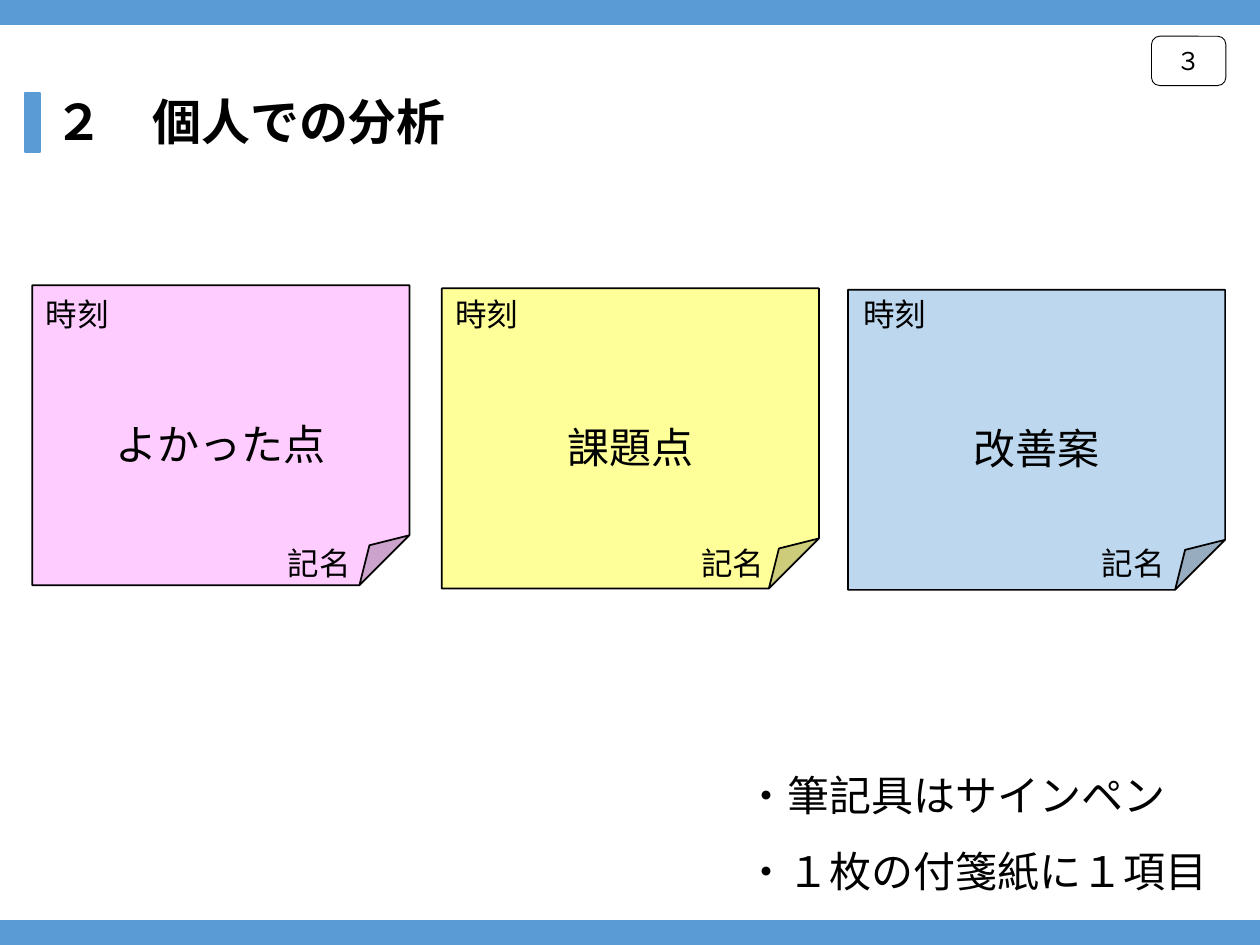
from dataclasses import dataclass

from pptx import Presentation
from pptx.dml.color import RGBColor
from pptx.enum.shapes import MSO_SHAPE as SHAPE
from pptx.enum.text import MSO_ANCHOR, MSO_AUTO_SIZE, PP_ALIGN
from pptx.oxml.ns import qn
from pptx.util import Pt


@dataclass(frozen=True)
class Theme:
    face: str = "Noto Sans CJK JP"
    ink: str = "000000"
    paper: str = "FFFFFF"
    blue: str = "5B9BD5"
    pink: str = "FFCCFF"
    yellow: str = "FFFF99"
    sky: str = "BDD7EE"
    title: int = 28
    body: int = 24
    label: int = 18
    number: int = 14


def apply(target, values):
    for name, value in values.items():
        setattr(target, name, value)


class Deck:
    def __init__(self, theme):
        self.theme = theme
        self.show = Presentation()
        apply(self.show, {"slide_width": Pt(720), "slide_height": Pt(540)})
        self.slide = self.show.slides.add_slide(self.show.slide_layouts[6])

    def fill_text(self, frame, lines, size, align, bold=False, space=1.0):
        for i, line in enumerate(lines):
            para = frame.paragraphs[0] if i == 0 else frame.add_paragraph()
            apply(para, {"alignment": align, "line_spacing": space})
            run = para.add_run()
            run.text = line
            apply(run.font, {"name": self.theme.face, "size": Pt(size),
                             "bold": bold})
            run.font.color.rgb = RGBColor.from_string(self.theme.ink)
            east = run.font._element.makeelement(
                qn("a:ea"), {"typeface": self.theme.face})
            run.font._element.find(qn("a:latin")).addnext(east)

    def shape(self, kind, box, fill, line=None, width=1):
        item = self.slide.shapes.add_shape(kind, *map(Pt, box))
        item.shadow.inherit = False
        item.fill.solid()
        item.fill.fore_color.rgb = RGBColor.from_string(fill)
        if line:
            item.line.color.rgb = RGBColor.from_string(line)
            item.line.width = Pt(width)
        else:
            item.line.fill.background()
        return item

    def text(self, box, lines, size, align=PP_ALIGN.LEFT, wrap=False, **style):
        frame = self.slide.shapes.add_textbox(*map(Pt, box)).text_frame
        apply(frame, {"word_wrap": wrap,
                      "auto_size": MSO_AUTO_SIZE.SHAPE_TO_FIT_TEXT})
        self.fill_text(frame, lines, size, align, **style)

    def note(self, left, top, fill, label, time, sign):
        """Draw a sticky note; time and sign are its small labels' corners."""
        card = self.shape(SHAPE.FOLDED_CORNER, (left, top, 215.5, 171.5),
                          fill, self.theme.ink)
        # The deep top inset sets the label below the middle.
        apply(card.text_frame, {"margin_top": Pt(42), "margin_bottom": Pt(4),
                                "vertical_anchor": MSO_ANCHOR.MIDDLE})
        self.fill_text(card.text_frame, [label], self.theme.body,
                       PP_ALIGN.CENTER)
        for word, spot in (("時刻", time), ("記名", sign)):
            self.text((*spot, 51, 29), [word], self.theme.label,
                      PP_ALIGN.CENTER)

    def badge(self, box, number):
        item = self.shape(SHAPE.ROUNDED_RECTANGLE, box, self.theme.paper,
                          self.theme.ink, 0.5)
        item.text_frame.vertical_anchor = MSO_ANCHOR.MIDDLE
        self.fill_text(item.text_frame, [number], self.theme.number,
                       PP_ALIGN.CENTER)


def main():
    theme = Theme()
    deck = Deck(theme)

    for top in (0, 525.8):
        deck.shape(SHAPE.RECTANGLE, (0, top, 720, 14.2), theme.blue)
    deck.shape(SHAPE.RECTANGLE, (14.2, 53, 8.6, 34), theme.blue, theme.blue)
    deck.text((24, 49, 574, 41), ["２　個人での分析"], theme.title,
              wrap=True, bold=True)
    deck.badge((658, 20.7, 42.5, 28.2), "３")

    notes = (
        (18.5, 163, theme.pink, "よかった点", (18.5, 165), (157, 307.5)),
        (252.5, 164.8, theme.yellow, "課題点", (252.7, 165), (393.3, 307.5)),
        (484.6, 165.6, theme.sky, "改善案", (485.8, 165), (622, 307.5)),
    )
    for note in notes:
        deck.note(*note)

    deck.text((419, 422, 281, 94),
              ["・筆記具はサインペン", "・１枚の付箋紙に１項目"],
              theme.body, space=1.5)
    deck.show.save("out.pptx")


if __name__ == "__main__":
    main()
